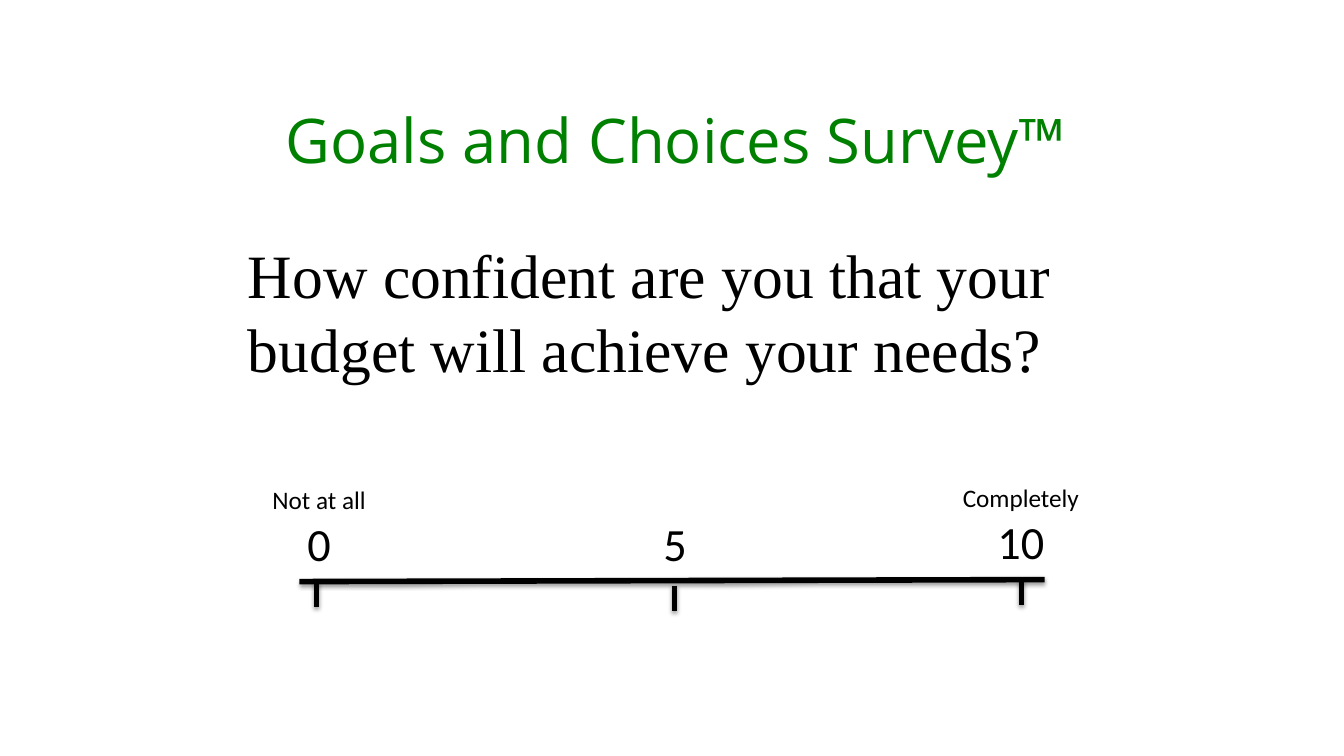
from lxml.etree import SubElement
from pptx import Presentation
from pptx.dml.color import RGBColor
from pptx.enum.shapes import MSO_CONNECTOR
from pptx.enum.text import PP_ALIGN
from pptx.oxml.ns import qn
from pptx.util import Inches, Pt

BLACK = "000000"
GREEN = "008000"
LABEL_WIDTH, LABEL_HEIGHT = 1.55, 1.26
CAPTION_HEIGHT = 0.3
TICK_LENGTH = 0.25


def color(hex_string):
    return RGBColor.from_string(hex_string)


def add_text_box(slide, box):
    text_frame = slide.shapes.add_textbox(*map(Inches, box)).text_frame
    text_frame.word_wrap = True
    return text_frame


def set_text(paragraph, text, size, font_name, hex_string=BLACK):
    paragraph.text = text
    font = paragraph.runs[0].font
    font.size = Pt(size)
    font.name = font_name
    font.color.rgb = color(hex_string)


def add_title(slide, box):
    text_frame = add_text_box(slide, box)
    text_frame.margin_left = Inches(0.87)
    set_text(text_frame.paragraphs[0], "Goals and Choices Survey™", 44, "Open Sans", GREEN)


def add_question(slide, box):
    text_frame = add_text_box(slide, box)
    question = "How confident are you that your budget will achieve your needs?"
    set_text(text_frame.paragraphs[0], question, 44, "Times New Roman")


def add_scale_line(slide, start, end):
    line = slide.shapes.add_connector(MSO_CONNECTOR.STRAIGHT, *map(Inches, start + end))
    line.line.color.rgb = color(BLACK)
    line.line.width = Pt(4)
    # Soft shadow straight below the line
    effects = SubElement(line._element.spPr, qn("a:effectLst"))
    shadow = SubElement(effects, qn("a:outerShdw"), blurRad=str(Pt(3.1)),
                        dist=str(Pt(1.6)), dir="5400000", rotWithShape="0")
    shadow_color = SubElement(shadow, qn("a:srgbClr"), val=BLACK)
    SubElement(shadow_color, qn("a:alpha"), val="38000")


def add_scale_label(slide, left, top, caption, number):
    text_frame = add_text_box(slide, (left, top, LABEL_WIDTH, LABEL_HEIGHT))
    paragraph = text_frame.paragraphs[0]
    if caption:
        set_text(paragraph, caption, 18, "Calibri")
        paragraph.alignment = PP_ALIGN.CENTER
        paragraph = text_frame.add_paragraph()
    else:
        # Keep the number level with those under a caption
        text_frame.margin_top += Inches(CAPTION_HEIGHT)
    set_text(paragraph, number, 33, "Calibri")
    paragraph.alignment = PP_ALIGN.CENTER


def add_scale(slide, box):
    left, top, width, height = box
    axis = top + height
    add_scale_line(slide, (left, axis), (left + width, axis - 0.02))

    # Offsets from the box: label left, label top, tick x, tick top
    marks = [
        ("Not at all", "0", -0.58, 0.02, 0.17, 0),
        ("", "5", 2.95, 0.02, 3.72, 0.04),
        ("Completely", "10", 6.38, 0, 7.16, -0.02),
    ]
    for caption, number, label_left, label_top, tick, tick_top in marks:
        add_scale_label(slide, left + label_left, top + label_top, caption, number)
        add_scale_line(slide, (left + tick, axis + tick_top),
                       (left + tick, axis + tick_top + TICK_LENGTH))


def main():
    presentation = Presentation()
    presentation.slide_width = Inches(13.33)
    presentation.slide_height = Inches(7.5)
    slide = presentation.slides.add_slide(presentation.slide_layouts[6])

    add_title(slide, (1.96, 0.96, 9.41, 0.84))
    add_question(slide, (2.36, 2.3, 9.01, 1.58))
    add_scale(slide, (2.97, 4.74, 7.39, 1.03))

    presentation.save("out.pptx")


if __name__ == "__main__":
    main()
